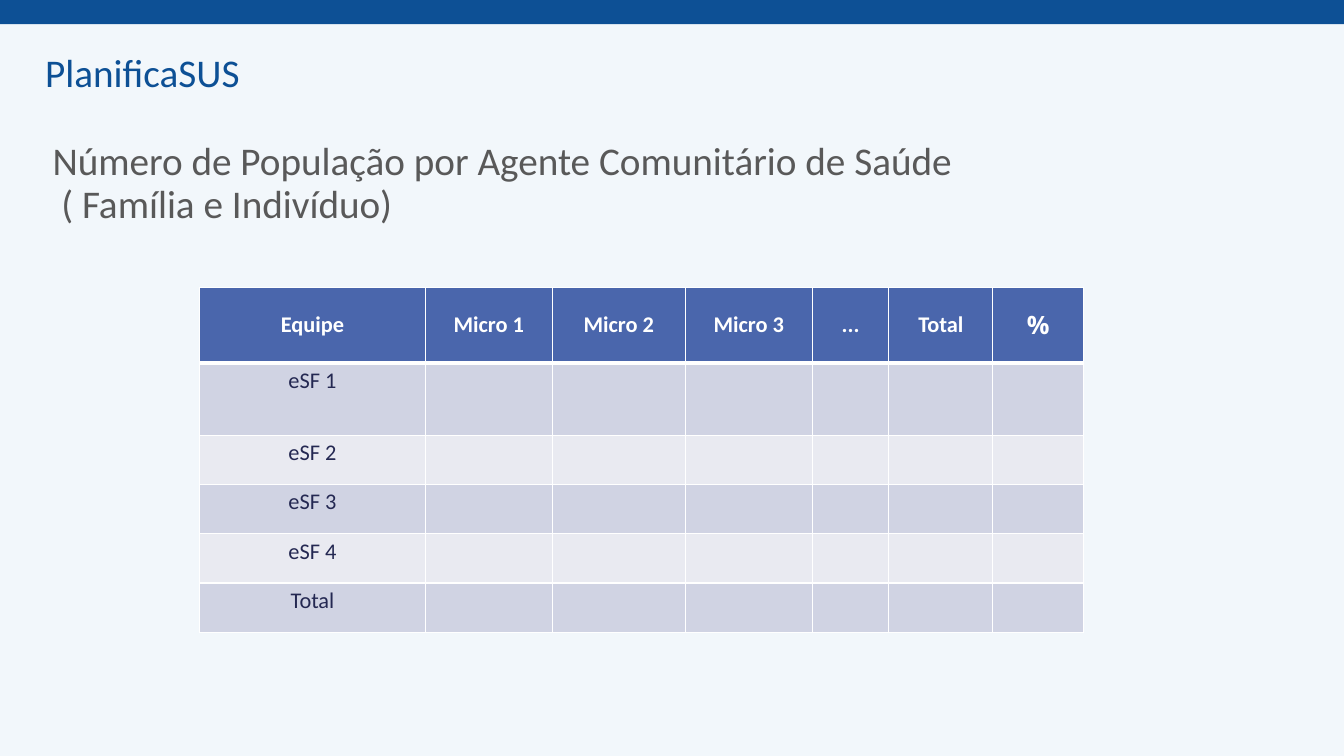
from lxml import etree
from pptx import Presentation
from pptx.dml.color import RGBColor
from pptx.enum import shapes, text
from pptx.oxml.ns import qn
from pptx.util import Cm, Pt

PROGRAMME = "PlanificaSUS"
HEADING = ["Número de População por Agente Comunitário de Saúde",
           " ( Família e Indivíduo)"]
COLUMNS = [("Equipe", 5.69), ("Micro 1", 3.2), ("Micro 2", 3.35), ("Micro 3", 3.2),
           ("...", 1.93), ("Total", 2.62), ("%", 2.29)]
TEAMS = [("eSF 1", 1.83), ("eSF 2", 1.24), ("eSF 3", 1.24), ("eSF 4", 1.24), ("Total", 1.24)]
HEADER_HEIGHT = 1.9

BACKGROUND, BLUE, GREY, WHITE = "F2F7FB", "0D5095", "595959", "FFFFFF"
HEADER_FILL, TEAM_INK = "4A66AC", "242852"
BANDS = ["D0D3E3", "E9EAF1"]


def paint(target, colour):
    """Give a fill one solid colour."""
    target.solid()
    target.fore_color.rgb = RGBColor.from_string(colour)


def write(paragraph, words, size, colour, bold=False, font="Calibri"):
    run = paragraph.add_run()
    run.text = words
    run.font.name = font
    run.font.size = Pt(size)
    run.font.bold = bold
    run.font.color.rgb = RGBColor.from_string(colour)


def style_cell(cell, fill, bottom=1):
    """Draw white borders, then the fill, which must follow them in the XML."""
    properties = cell._tc.get_or_add_tcPr()
    for side, points in (("L", 1), ("R", 1), ("T", 1), ("B", bottom)):
        line = etree.SubElement(properties, qn(f"a:ln{side}"), w=str(Pt(points)))
        solid = etree.SubElement(line, qn("a:solidFill"))
        etree.SubElement(solid, qn("a:srgbClr"), val=WHITE)
    paint(cell.fill, fill)
    cell.margin_left = cell.margin_right = Cm(0.18)


def write_cell(cell, words, margin, *style):
    cell.margin_top = cell.margin_bottom = Cm(margin)
    paragraph = cell.text_frame.paragraphs[0]
    paragraph.alignment = text.PP_ALIGN.CENTER
    write(paragraph, words, *style)


def add_banner(slide, width):
    bar = slide.shapes.add_shape(shapes.MSO_SHAPE.RECTANGLE, 0, 0, width, Cm(0.61))
    bar.shadow.inherit = False
    paint(bar.fill, BLUE)
    bar.line.fill.background()
    programme = slide.shapes.add_textbox(Cm(0.89), Cm(1.09), Cm(5.46), Cm(1.45)).text_frame
    programme.word_wrap = False
    programme.auto_size = text.MSO_AUTO_SIZE.SHAPE_TO_FIT_TEXT
    write(programme.paragraphs[0], PROGRAMME, 28, BLUE)


def fill_heading(title):
    title.left, title.top, title.width, title.height = Cm(1.07), Cm(3.45), Cm(29.11), Cm(2.41)
    frame = title.text_frame
    frame.word_wrap = True
    frame.auto_size = text.MSO_AUTO_SIZE.SHAPE_TO_FIT_TEXT
    frame.vertical_anchor = text.MSO_ANCHOR.TOP
    for index, line in enumerate(HEADING):
        paragraph = frame.add_paragraph() if index else frame.paragraphs[0]
        paragraph.alignment = text.PP_ALIGN.LEFT
        paragraph.line_spacing = 0.9
        paragraph.space_before = Pt(0)
        write(paragraph, line, 28, GREY)


def add_population_table(slide):
    widths = [width for _, width in COLUMNS]
    heights = [HEADER_HEIGHT] + [height for _, height in TEAMS]
    table = slide.shapes.add_table(len(heights), len(widths), Cm(5.03), Cm(7.24),
                                   Cm(sum(widths)), Cm(sum(heights))).table
    for column, width in zip(table.columns, widths):
        column.width = Cm(width)
    for row, height in zip(table.rows, heights):
        row.height = Cm(height)

    for index, (label, _) in enumerate(COLUMNS):
        header = table.cell(0, index)
        style_cell(header, HEADER_FILL, bottom=3)
        header.vertical_anchor = text.MSO_ANCHOR.MIDDLE
        size, font = (18, "Open Sans") if label == "%" else (16, "Calibri")
        write_cell(header, label, 0.13, size, WHITE, True, font)

    for index, (team, _) in enumerate(TEAMS):
        for cell in table.rows[index + 1].cells:
            style_cell(cell, BANDS[index % 2])
        write_cell(table.cell(index + 1, 0), team, 0.1, 16, TEAM_INK)


def main():
    deck = Presentation()
    deck.slide_width, deck.slide_height = Cm(33.87), Cm(19.05)
    slide = deck.slides.add_slide(deck.slide_layouts[5])
    paint(slide.background.fill, BACKGROUND)
    add_banner(slide, deck.slide_width)
    fill_heading(slide.shapes.title)
    add_population_table(slide)
    deck.save("out.pptx")


if __name__ == "__main__":
    main()
